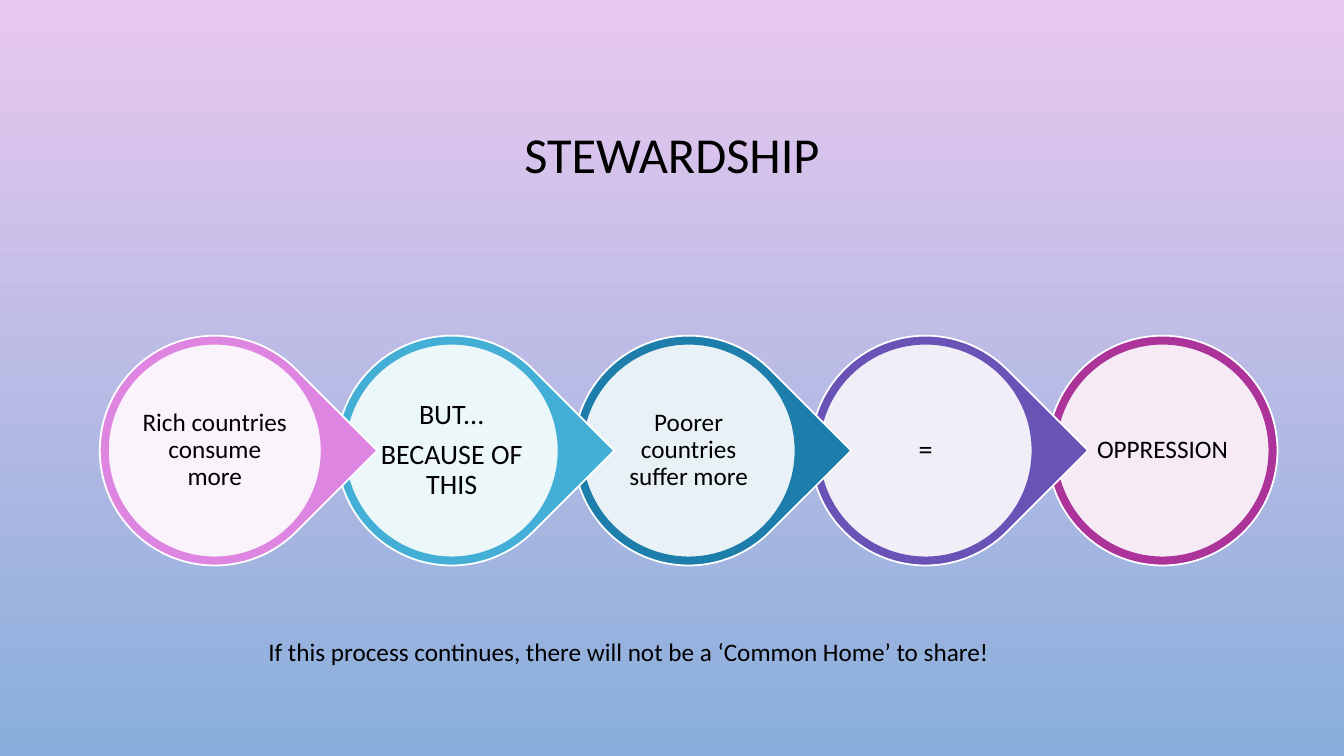
from lxml.etree import SubElement
from pptx import Presentation
from pptx.dml.color import RGBColor
from pptx.enum.shapes import MSO_SHAPE
from pptx.enum.text import MSO_ANCHOR, MSO_AUTO_SIZE, PP_ALIGN
from pptx.oxml.ns import qn
from pptx.util import Inches, Pt


def color(value):
    return RGBColor.from_string(value)


def apply(target, values):
    for name, value in values.items():
        setattr(target, name, value)


class SlideBuilder:
    font_name = "Calibri"
    text_color = "000000"
    white = "FFFFFF"
    line_width = Pt(1.25)

    def __init__(self, presentation):
        self.slide = presentation.slides.add_slide(presentation.slide_layouts[5])
        self.shapes = self.slide.shapes

    def background(self, top, bottom):
        fill = self.slide.background.fill
        fill.gradient()
        fill.gradient_angle = 270
        for stop, value in zip(fill.gradient_stops, (top, bottom)):
            stop.color.rgb = color(value)

    def start_group(self):
        self.shapes = self.slide.shapes.add_group_shape().shapes

    def end_group(self):
        self.shapes = self.slide.shapes

    def set_text(self, shape, lines, size, frame_format, paragraph_format):
        frame = shape.text_frame
        apply(frame, {"word_wrap": True, **frame_format})
        frame.text = "\n".join(lines)
        for paragraph in frame.paragraphs:
            apply(paragraph, {"alignment": PP_ALIGN.CENTER, **paragraph_format})
            apply(paragraph.font, {"name": self.font_name, "size": Pt(size), "bold": False})
            paragraph.font.color.rgb = color(self.text_color)

    def title(self, text, left, top, width, height, size):
        title = self.shapes.title
        place = {"left": left, "top": top, "width": width, "height": height}
        apply(title, {name: Inches(value) for name, value in place.items()})
        frame_format = {"vertical_anchor": MSO_ANCHOR.MIDDLE, "auto_size": MSO_AUTO_SIZE.NONE}
        self.set_text(title, [text], size, frame_format, {"line_spacing": 0.9})

    def text(self, lines, left, top, width, height, size, frame_format, paragraph_format):
        box = self.shapes.add_textbox(Inches(left), Inches(top), Inches(width), Inches(height))
        self.set_text(box, lines, size, frame_format, paragraph_format)

    def shape(self, kind, left, top, side, fill, line, rotation=0, opacity=100):
        shape = self.shapes.add_shape(kind, Inches(left), Inches(top), Inches(side), Inches(side))
        shape.shadow.inherit = False
        shape.rotation = rotation
        shape.fill.solid()
        shape.fill.fore_color.rgb = color(fill)
        if opacity < 100:
            fill_color = shape.element.spPr.find(qn("a:solidFill"))[0]
            SubElement(fill_color, qn("a:alpha"), val=str(opacity * 1000))
        shape.line.color.rgb = color(line)
        shape.line.width = self.line_width

    def step(self, lines, left, top, size, accent, is_last):
        kind, rotation = (MSO_SHAPE.OVAL, 0) if is_last else (MSO_SHAPE.TEAR, 45)
        self.shape(kind, left, top, 2.28, accent, self.white, rotation)
        self.shape(MSO_SHAPE.OVAL, left + 0.08, top + 0.08, 2.12, self.white, accent, opacity=90)
        margins = {f"margin_{edge}": Inches(0.03) for edge in ("left", "top", "right", "bottom")}
        self.text(
            lines, left + 0.38, top + 0.38, 1.52, 1.52, size,
            {"vertical_anchor": MSO_ANCHOR.MIDDLE, **margins},
            {"line_spacing": 0.9, "space_after": Pt(size * 0.35)},
        )


STEPS = [
    (["Rich countries consume more"], 18, "DE85E1"),
    (["BUT...", "BECAUSE OF THIS"], 20, "43AFD6"),
    (["Poorer countries suffer more"], 18, "1D7EAB"),
    (["="], 20, "6953B7"),
    (["OPPRESSION"], 18, "AC339A"),
]


def main():
    presentation = Presentation()
    apply(presentation, {"slide_width": Inches(13.33), "slide_height": Inches(7.5)})
    builder = SlideBuilder(presentation)
    builder.background("E9C8EF", "89AEDB")
    builder.title("STEWARDSHIP", 1, 0.68, 11.33, 1.75, 36)

    builder.start_group()
    last = len(STEPS) - 1
    for index, (lines, size, accent) in reversed(list(enumerate(STEPS))):
        builder.step(lines, 0.99 + index * 2.35, 3.33, size, accent, index == last)
    builder.end_group()

    builder.text(
        ["If this process continues, there will not be a ‘Common Home’ to share!"],
        2.53, 6.26, 7.41, 0.4, 18, {"auto_size": MSO_AUTO_SIZE.SHAPE_TO_FIT_TEXT}, {},
    )
    presentation.save("out.pptx")


if __name__ == "__main__":
    main()
